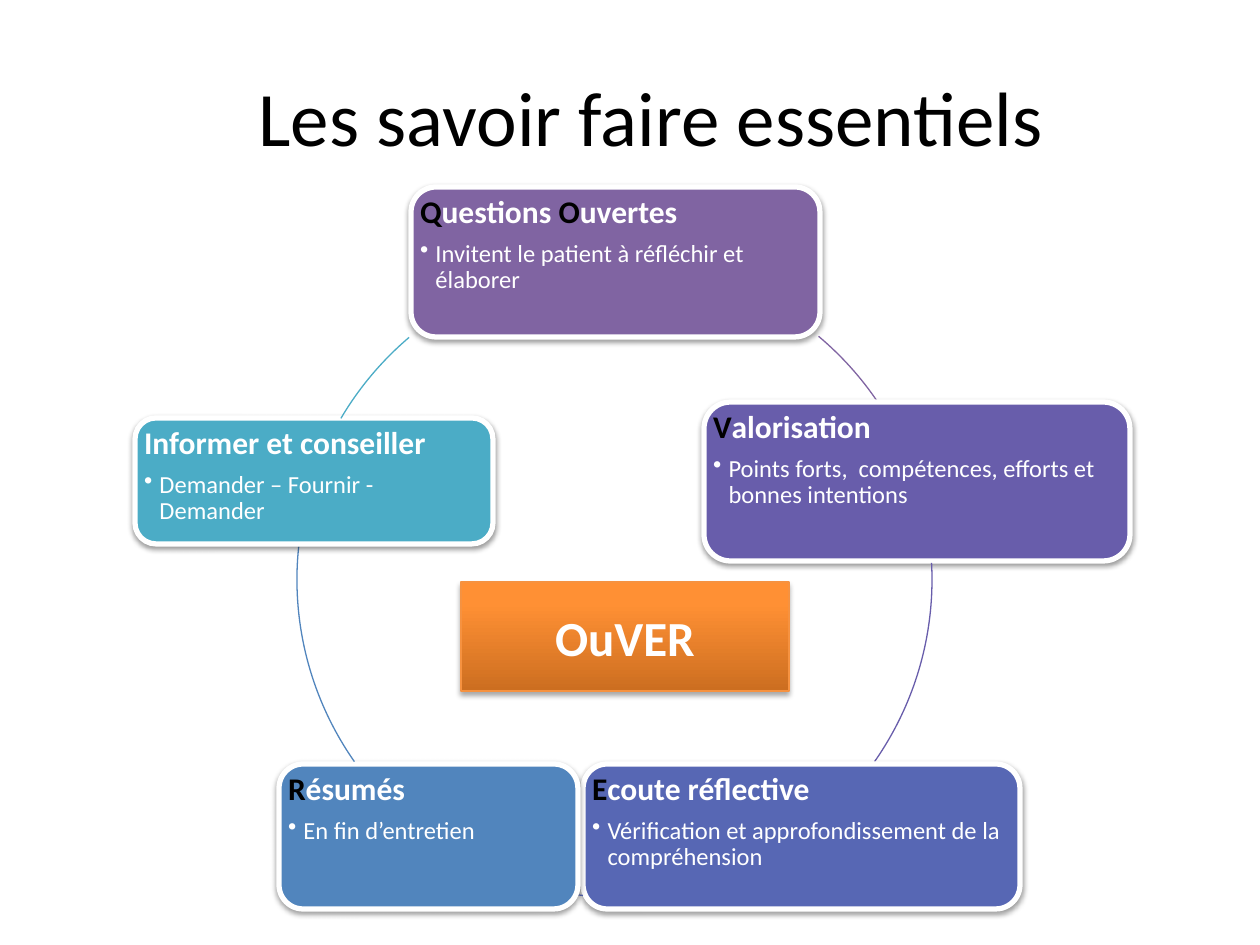
from lxml.etree import SubElement
from pptx import Presentation
from pptx.dml.color import RGBColor
from pptx.enum.shapes import MSO_SHAPE as Preset
from pptx.enum.text import MSO_ANCHOR as Anchor, PP_ALIGN as Align
from pptx.oxml.ns import qn
from pptx.util import Pt

EMU_PER_PX = 914400 / 126
FONT = "Calibri"
COLORS = {
    "black": "000000", "white": "FFFFFF",
    "purple": "8064A2", "violet": "685DAB", "indigo": "5767B4",
    "blue": "5185BD", "teal": "4BACC6",
    "orange_dark": "CC6E20", "orange": "FF9034",
    "orange_light": "FF9136", "orange_line": "F69240",
}
RING = (297, 262, 635, 635)
STEPS = [
    ("purple", (411, 187, 409, 150), (310, 326),
     [("Q", "black"), ("uestions ", "white"), ("O", "black"), ("uvertes", "white")],
     "Invitent le patient à réfléchir et élaborer"),
    ("violet", (704, 402, 426, 159), (357, 35),
     [("V", "black"), ("alorisation", "white")],
     "Points forts,  compétences, efforts et bonnes intentions"),
    ("indigo", (583, 764, 437, 145), (95.7, 96.6),
     [("E", "black"), ("coute réflective", "white")],
     "Vérification et approfondissement de la compréhension"),
    ("blue", (279, 764, 299, 145), (145, 186),
     [("R", "black"), ("ésumés", "white")],
     "En fin d’entretien"),
    ("teal", (135, 418, 358, 126), (210.5, 229.7),
     [("Informer et conseiller", "white")],
     "Demander – Fournir - Demander"),
]


def px(value):
    return round(value * EMU_PER_PX)


def rgb(name):
    return RGBColor.from_string(COLORS[name])


def add_run(paragraph, text, size, color, bold=False):
    run = paragraph.add_run()
    run.text = text
    run.font.name = FONT
    run.font.size = Pt(size)
    run.font.bold = bold
    run.font.color.rgb = rgb(color)


def add_shape(slide, preset, box, line_color, line_width):
    shape = slide.shapes.add_shape(preset, *map(px, box))
    shape.line.color.rgb = rgb(line_color)
    shape.line.width = Pt(line_width)
    shape.shadow.inherit = False
    return shape


def add_shadow(shape, distance, opacity):
    effects = shape.element.spPr.find(qn("a:effectLst"))
    shadow = SubElement(effects, qn("a:outerShdw"), blurRad=str(Pt(3.1)),
                        dist=str(Pt(distance)), dir="5400000", rotWithShape="0")
    color = SubElement(shadow, qn("a:srgbClr"), val=COLORS["black"])
    SubElement(color, qn("a:alpha"), val=str(opacity * 1000))


def add_bullet(paragraph, indent):
    properties = paragraph._p.get_or_add_pPr()
    properties.set("marL", str(px(indent)))
    properties.set("indent", str(-px(indent)))
    SubElement(properties, qn("a:buChar"), char="•")


def add_title(slide, box, text):
    title = slide.shapes.title
    title.left, title.top, title.width, title.height = map(px, box)
    frame = title.text_frame
    frame.vertical_anchor = Anchor.MIDDLE
    paragraph = frame.paragraphs[0]
    paragraph.alignment = Align.CENTER
    add_run(paragraph, text, 44, "black")


def add_card(slide, box, color, heading, detail):
    card = add_shape(slide, Preset.ROUNDED_RECTANGLE, box, "white", 3)
    card.fill.solid()
    card.fill.fore_color.rgb = rgb(color)
    add_shadow(card, 1.6, 38)
    frame = card.text_frame
    frame.word_wrap = True
    frame.vertical_anchor = Anchor.TOP
    corner_inset = 0.29 * card.adjustments[0] * box[3]
    margin = px(9 - corner_inset)
    frame.margin_left = frame.margin_right = margin
    frame.margin_top = frame.margin_bottom = margin

    title = frame.paragraphs[0]
    title.space_after = Pt(6.3)
    for text, run_color in heading:
        add_run(title, text, 18, run_color, True)
    bullet = frame.add_paragraph()
    add_bullet(bullet, 15.5)
    bullet.level = 1
    add_run(bullet, detail, 14, "white")
    for paragraph in (title, bullet):
        paragraph.alignment = Align.LEFT
        paragraph.line_spacing = 0.9


def add_arc(slide, box, color, angles):
    arc = add_shape(slide, Preset.ARC, box, color, 0.75)
    arc.fill.background()
    for index, degrees in enumerate(angles):
        arc.adjustments[index] = degrees * 0.6


def add_cycle(slide):
    for color, box, angles, heading, detail in STEPS:
        add_card(slide, box, color, heading, detail)
        add_arc(slide, RING, color, angles)


def add_center(slide, box, text):
    center = add_shape(slide, Preset.RECTANGLE, box, "orange_line", 0.75)
    center.fill.gradient()
    center.fill.gradient_angle = 90
    stops = center.element.spPr.find(".//" + qn("a:gsLst"))
    stops.clear()
    for percent, color in ((0, "orange_dark"), (80, "orange"), (100, "orange_light")):
        stop = SubElement(stops, qn("a:gs"), pos=str(percent * 1000))
        SubElement(stop, qn("a:srgbClr"), val=COLORS[color])
    add_shadow(center, 1.8, 35)
    frame = center.text_frame
    frame.word_wrap = True
    frame.vertical_anchor = Anchor.MIDDLE
    paragraph = frame.paragraphs[0]
    paragraph.alignment = Align.CENTER
    add_run(paragraph, text, 28, "white", True)


def main():
    presentation = Presentation()
    presentation.slide_width, presentation.slide_height = px(1260), px(945)
    slide = presentation.slides.add_slide(presentation.slide_layouts[5])
    add_title(slide, (84, 37, 1134, 157), "Les savoir faire essentiels")
    add_cycle(slide)
    add_center(slide, (461, 582, 328, 109), "OuVER")
    presentation.save("out.pptx")


if __name__ == "__main__":
    main()
